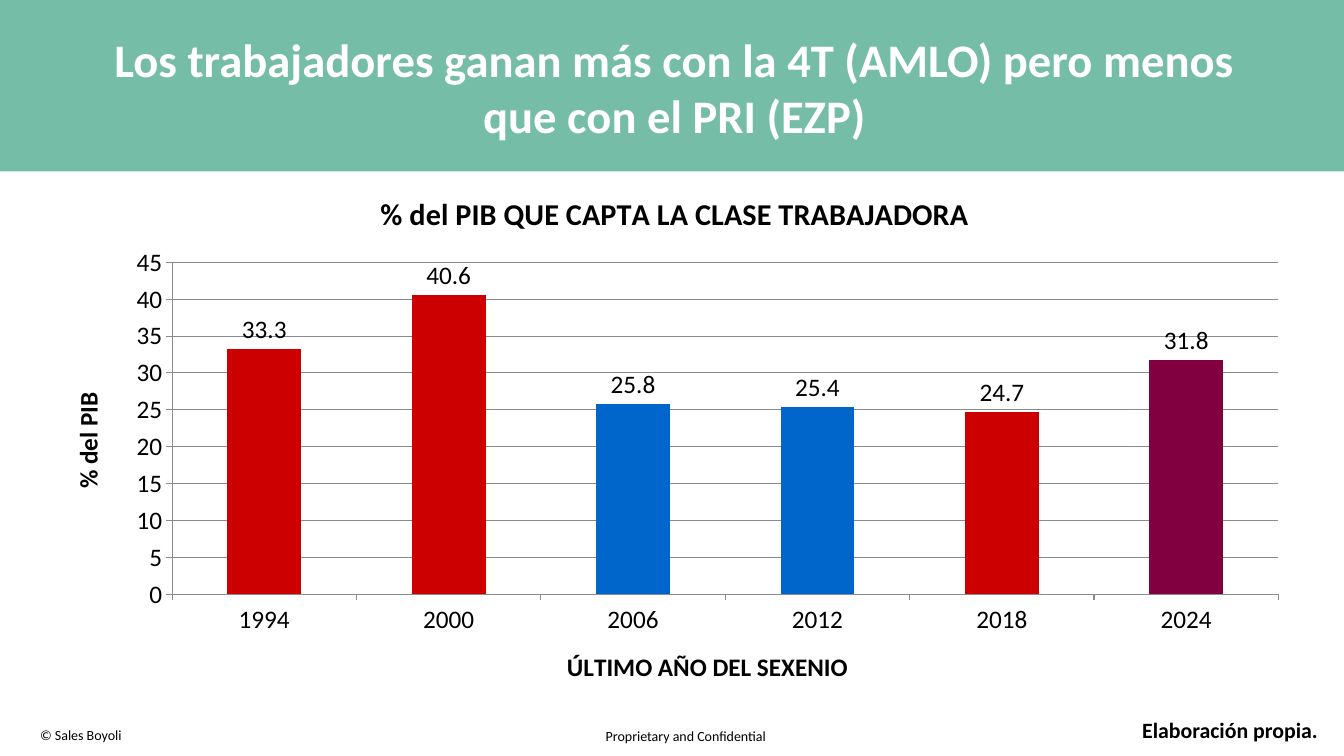
"""Build the slide on the share of GDP earned by workers."""
from lxml import etree
from pptx import Presentation
from pptx.chart.data import CategoryChartData
from pptx.dml.color import RGBColor
from pptx.enum.chart import XL_CHART_TYPE as CT, XL_LABEL_POSITION as LP, XL_TICK_MARK as TM
from pptx.enum.shapes import MSO_SHAPE
from pptx.enum.text import MSO_ANCHOR, PP_ALIGN
from pptx.oxml import parse_xml
from pptx.oxml.ns import nsdecls, qn
from pptx.util import Inches, Pt

FONT = "Calibri"
COLORS = {"band": "75BDA7", "text": "000000", "white": "FFFFFF", "grid": "8B8B8B",
          "red": "CC0000", "blue": "0066CC", "purple": "800040"}
SEXENIOS = [("1994", 33.3, "red"), ("2000", 40.6, "red"), ("2006", 25.8, "blue"),
            ("2012", 25.4, "blue"), ("2018", 24.7, "red"), ("2024", 31.8, "purple")]
PLOT_AREA = {"x": 0.1, "y": 0.17, "w": 0.88, "h": 0.62}


def rgb(name):
    return RGBColor.from_string(COLORS[name])


def style_font(font, size, bold=False, color="text"):
    font.name = FONT
    font.size = Pt(size)
    font.bold = bold
    font.color.rgb = rgb(color)


def add_band(s):
    sp = s.shapes.add_shape(MSO_SHAPE.RECTANGLE, 0, 0, Inches(13.33), Inches(1.7))
    sp.shadow.inherit = False
    sp.fill.solid()
    sp.fill.fore_color.rgb = rgb("band")
    sp.line.fill.background()
    s.shapes._spTree.insert(2, sp._element)


def set_title(s, text):
    title = s.shapes.title
    title.left, title.top = Inches(0.69), Inches(0.25)
    title.width, title.height = Inches(12), Inches(1.22)
    tf = title.text_frame
    tf.text = text
    tf.word_wrap = True
    tf.vertical_anchor = MSO_ANCHOR.MIDDLE
    p = tf.paragraphs[0]
    p.alignment = PP_ALIGN.CENTER
    style_font(p.runs[0].font, 33.3, True, "white")


def add_text(s, text, left, top, width, height, size, bold=False):
    box = s.shapes.add_textbox(Inches(left), Inches(top), Inches(width), Inches(height))
    tf = box.text_frame
    tf.text = text
    tf.word_wrap = True
    style_font(tf.paragraphs[0].runs[0].font, size, bold)


def title_chart_part(part, text, size):
    tf = (part.chart_title if hasattr(part, "chart_title") else part.axis_title).text_frame
    tf.text = text
    style_font(tf.paragraphs[0].runs[0].font, size, True)


def place_plot_area(chart):
    area = chart._chartSpace.chart.plotArea
    for old in area.findall(qn("c:layout")):
        area.remove(old)
    layout = parse_xml(f"<c:layout {nsdecls('c')}><c:manualLayout/></c:layout>")
    settings = {"layoutTarget": "inner", "xMode": "edge", "yMode": "edge", **PLOT_AREA}
    for tag, value in settings.items():
        etree.SubElement(layout[0], qn(f"c:{tag}")).set("val", str(value))
    area.insert(0, layout)


def add_share_chart(s):
    data = CategoryChartData()
    data.categories = [year for year, _, _ in SEXENIOS]
    data.add_series("Series 1", [share for _, share, _ in SEXENIOS])
    chart = s.shapes.add_chart(CT.COLUMN_CLUSTERED, Inches(0.46), Inches(1.7),
                               Inches(12.47), Inches(5.31), data).chart
    style_font(chart.font, 18)
    chart.has_legend = False
    title_chart_part(chart, "% del PIB QUE CAPTA LA CLASE TRABAJADORA", 21.6)
    title_chart_part(chart.category_axis, "ÚLTIMO AÑO DEL SEXENIO", 18)
    title_chart_part(chart.value_axis, "% del PIB", 18)
    for axis in (chart.category_axis, chart.value_axis):
        axis.major_tick_mark = TM.OUTSIDE
        axis.format.line.color.rgb = rgb("grid")
    axis = chart.value_axis
    axis.minimum_scale, axis.maximum_scale, axis.major_unit = 0, 45, 5
    axis.major_gridlines.format.line.color.rgb = rgb("grid")
    plot = chart.plots[0]
    plot.gap_width = 150
    plot.vary_by_categories = False
    plot.has_data_labels = True
    labels = plot.data_labels
    labels.show_value = True
    labels.position = LP.OUTSIDE_END
    style_font(labels.font, 18)
    for i, (_, _, color) in enumerate(SEXENIOS):
        fill = plot.series[0].points[i].format.fill
        fill.solid()
        fill.fore_color.rgb = rgb(color)
    place_plot_area(chart)


def main():
    prs = Presentation()
    prs.slide_width, prs.slide_height = Inches(13.33), Inches(7.5)
    s = prs.slides.add_slide(prs.slide_layouts[5])
    add_band(s)
    set_title(s, "Los trabajadores ganan más con la 4T (AMLO) pero menos que con el PRI (EZP)")
    add_share_chart(s)
    add_text(s, "Proprietary and Confidential", 5.91, 7.17, 1.9, 0.27, 10)
    add_text(s, "© Sales Boyoli", 0.3, 7.16, 3.37, 0.27, 10)
    add_text(s, "Elaboración propia.", 11.23, 7.06, 2.1, 0.36, 15.6, True)
    prs.save("out.pptx")


if __name__ == "__main__":
    main()
